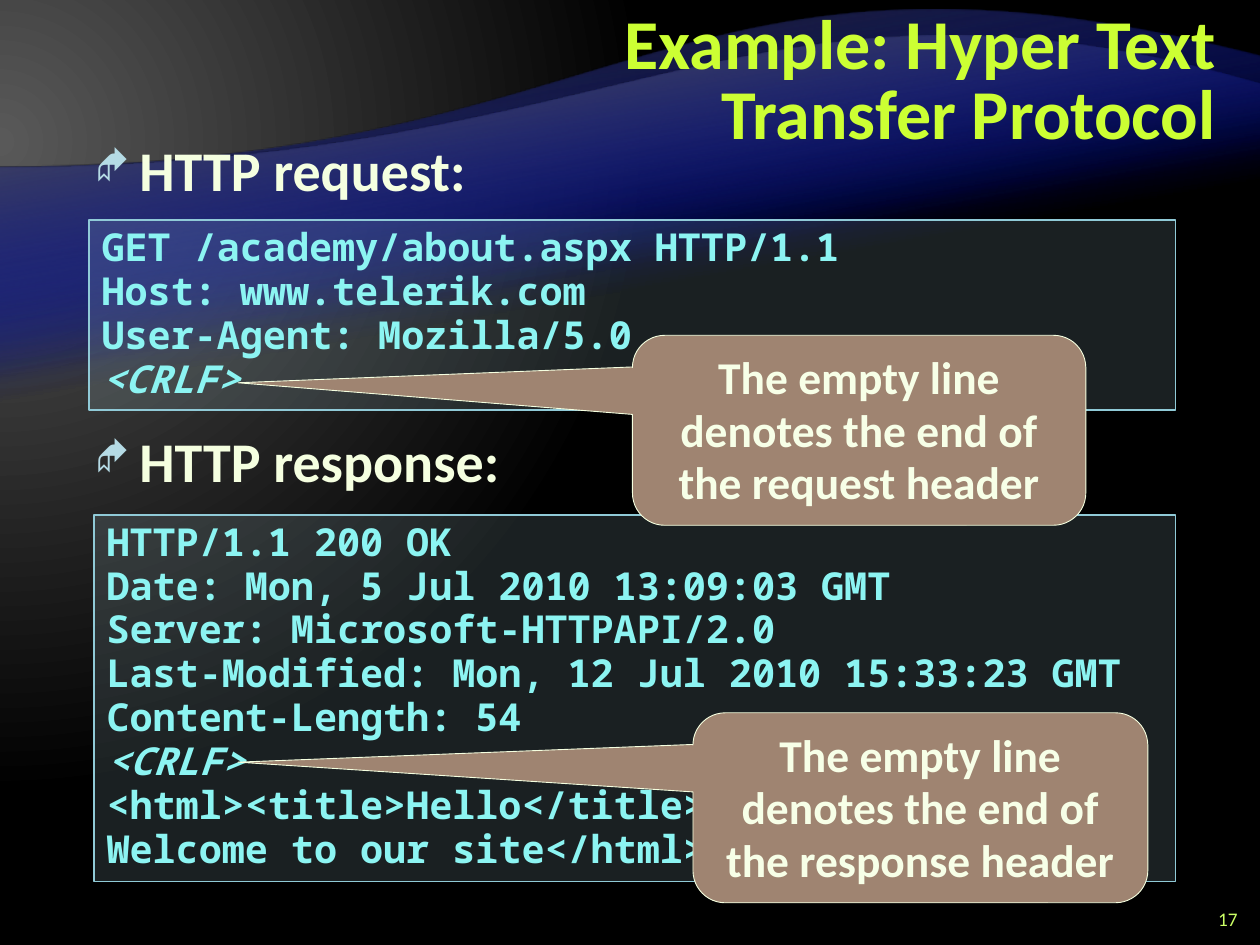
from pptx import Presentation
from pptx.dml.color import RGBColor
from pptx.enum.shapes import MSO_SHAPE
from pptx.enum.text import MSO_ANCHOR, MSO_AUTO_SIZE, PP_ALIGN
from pptx.oxml import parse_xml
from pptx.oxml.ns import nsdecls, qn
from pptx.util import Cm, Pt

RECT = MSO_SHAPE.RECTANGLE
CALLOUT = MSO_SHAPE.ROUNDED_RECTANGULAR_CALLOUT
TOP, MIDDLE = MSO_ANCHOR.TOP, MSO_ANCHOR.MIDDLE
LEFT, CENTER, RIGHT = PP_ALIGN.LEFT, PP_ALIGN.CENTER, PP_ALIGN.RIGHT

TITLE = "Example: Hyper Text Transfer Protocol"
SLIDE_NUMBER = "17"
CRLF = "<CRLF>"

# Boxes are left, top, width, height in centimetres
HEADINGS = [
    ("HTTP request:", (1.67, 2.61, 8.71, 1.63)),
    ("HTTP response:", (1.67, 8.47, 9.35, 1.63)),
]
CODE_BLOCKS = [
    (["GET /academy/about.aspx HTTP/1.1",
      "Host: www.telerik.com",
      "User-Agent: Mozilla/5.0",
      CRLF], (1.8, 4.44, 21.9, 3.83)),
    (["HTTP/1.1 200 OK",
      "Date: Mon, 5 Jul 2010 13:09:03 GMT",
      "Server: Microsoft-HTTPAPI/2.0",
      "Last-Modified: Mon, 12 Jul 2010 15:33:23 GMT",
      "Content-Length: 54",
      CRLF,
      "<html><title>Hello</title>",
      "Welcome to our site</html>"], (1.9, 10.38, 21.8, 7.39)),
]
CALLOUTS = [
    ("The empty line denotes the end of the request header",
     (12.75, 6.76, 9.14, 3.83), (-1.37, -0.25, 0.17)),
    ("The empty line denotes the end of the response header",
     (13.97, 14.37, 9.17, 3.83), (-1.5, -0.24, 0.17)),
]
# Top edge as a Bezier curve from left to right, bottom, colour of the crest
WAVES = [
    ([(0, 3.38), (12.7, 3.38), (13.56, -1.9), (25.4, 1.14)], 16.59, "262626"),
    ([(0, 3.38), (12.7, 3.38), (15.19, -1.24), (25.4, 1.7)], 14.15, "595959"),
]


def rgb(value):
    return RGBColor.from_string(value)


def place(sp, box):
    sp.left, sp.top, sp.width, sp.height = (Cm(v) for v in box)


def set_gradient(parent, stops, direction):
    """Replace the solid fill of parent; stops are (position, colour, opacity)."""
    stop_xml = "".join(
        f'<a:gs pos="{pos * 1000}"><a:srgbClr val="{color}">'
        f'<a:alpha val="{opacity * 1000}"/></a:srgbClr></a:gs>'
        for pos, color, opacity in stops)
    solid = parent.find(qn("a:solidFill"))
    parent.replace(solid, parse_xml(
        f'<a:gradFill {nsdecls("a")} rotWithShape="1">'
        f'<a:gsLst>{stop_xml}</a:gsLst>{direction}</a:gradFill>'))


def write(sp, lines, size, color, font="Calibri", bold=True, align=LEFT,
          anchor=TOP, spacing=None):
    tf = sp.text_frame
    tf.word_wrap = True
    tf.auto_size = MSO_AUTO_SIZE.NONE
    tf.vertical_anchor = anchor
    for i, line in enumerate(lines):
        p = tf.add_paragraph() if i else tf.paragraphs[0]
        p.alignment = align
        p.line_spacing = spacing
        r = p.add_run()
        r.text = line
        r.font.name = font
        r.font.size = Pt(size)
        r.font.bold = bold
        r.font.italic = line == CRLF
        r.font.color.rgb = rgb(color)


def add_text(s, box, lines, size, color, **fmt):
    sp = s.shapes.add_textbox(*(Cm(v) for v in box))
    write(sp, lines, size, color, **fmt)
    return sp


def add_box(s, kind, box, fill, line, line_width):
    sp = s.shapes.add_shape(kind, *(Cm(v) for v in box))
    sp.shadow.inherit = False
    sp.fill.solid()
    sp.fill.fore_color.rgb = rgb(fill)
    sp.line.color.rgb = rgb(line)
    sp.line.width = Pt(line_width)
    return sp


def set_opacity(sp, percent):
    color = sp._element.spPr.find(qn("a:solidFill"))[0]
    color.append(parse_xml(
        f'<a:alpha {nsdecls("a")} val="{percent * 1000}"/>'))


def add_bullet(p):
    pPr = p._p.get_or_add_pPr()
    pPr.set("marL", str(Cm(0.89)))
    pPr.set("indent", str(-Cm(0.89)))
    for xml in ('<a:buClr {}><a:srgbClr val="B5DBE5"/></a:buClr>',
                '<a:buSzPct {} val="70000"/>',
                '<a:buFont {} typeface="Wingdings"/>',
                '<a:buChar {} char="◆"/>'):
        pPr.append(parse_xml(xml.format(nsdecls("a"))))


def add_wave(s, curve, bottom, color):
    """Draw the wave upside down, then turn it by 180 degrees."""
    width, top = curve[-1]
    turned = [(Cm(width - x), Cm(top + bottom - y)) for x, y in curve]
    start, control_1, control_2, end = turned
    builder = s.shapes.build_freeform(*start)
    builder.add_line_segments(
        [end, (Cm(0), Cm(top)), (Cm(width), Cm(top))], close=True)
    sp = builder.convert_to_shape()

    points = "".join(f'<a:pt x="{x}" y="{y - Cm(top)}"/>'
                     for x, y in (control_1, control_2, end))
    straight = next(sp._element.iter(qn("a:lnTo")))
    straight.getparent().replace(straight, parse_xml(
        f'<a:cubicBezTo {nsdecls("a")}>{points}</a:cubicBezTo>'))

    sp.rotation = 180
    sp.shadow.inherit = False
    sp.line.fill.background()
    sp.fill.solid()
    sp.fill.fore_color.rgb = rgb(color)
    set_gradient(sp._element.spPr, [(65, "000D9E", 0), (100, color, 100)],
                 '<a:lin ang="4800000" scaled="0"/>')


def main():
    prs = Presentation()
    prs.slide_width, prs.slide_height = Cm(25.4), Cm(19.05)
    s = prs.slides.add_slide(prs.slide_layouts[5])

    s.background.fill.solid()
    set_gradient(
        s._element.cSld.bg.bgPr, [(0, "595959", 100), (83, "000000", 100)],
        '<a:path path="circle"><a:fillToRect l="20000" t="30000" '
        'r="135000" b="100000"/></a:path>')
    for wave in WAVES * 2:
        add_wave(s, *wave)

    title = s.shapes.title
    s.shapes[-1]._element.addnext(title._element)
    place(title, (9.09, 0.42, 15.67, 2.54))
    write(title, [TITLE], 40, "CCFF33", align=RIGHT, anchor=MIDDLE,
          spacing=Pt(40))

    for lines, box in CODE_BLOCKS:
        sp = add_box(s, RECT, box, "B5DBE5", "90CAD7", 1)
        set_opacity(sp, 15)
        write(sp, lines, 22, "8CF4F2", font="Noto Sans Mono", spacing=0.95)

    for text, box in HEADINGS:
        sp = add_text(s, box, [text], 32, "F5FFE0")
        add_bullet(sp.text_frame.paragraphs[0])

    for text, box, adjustments in CALLOUTS:
        sp = add_box(s, CALLOUT, box, "9F8471", "F5FFE0", 0.5)
        for i, value in enumerate(adjustments):
            sp.adjustments[i] = value
        write(sp, [text], 26, "F7FFE7", align=CENTER, anchor=MIDDLE,
              spacing=Pt(30))

    add_text(s, (23.93, 18.21, 1.27, 0.64), [SLIDE_NUMBER], 11, "CCFF66",
             bold=False, align=RIGHT, anchor=MIDDLE)
    prs.save("out.pptx")


if __name__ == "__main__":
    main()
